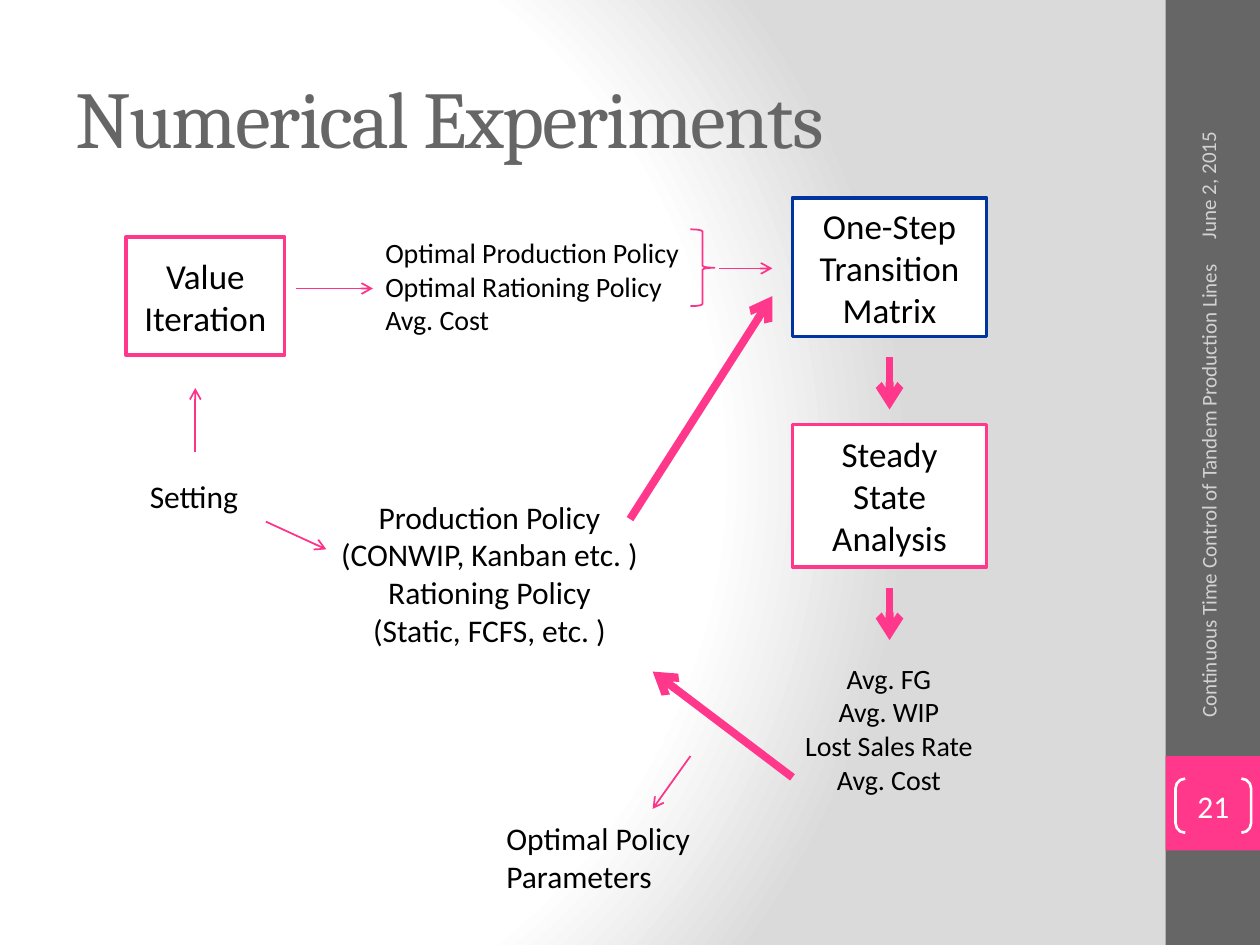
from dataclasses import dataclass

from lxml import etree
from pptx import Presentation
from pptx.dml.color import RGBColor
from pptx.enum.shapes import MSO_CONNECTOR, MSO_SHAPE
from pptx.enum.text import MSO_ANCHOR, PP_ALIGN
from pptx.oxml import parse_xml
from pptx.oxml.ns import nsdecls, qn
from pptx.util import Inches, Pt

LEFT, CENTER, RIGHT = PP_ALIGN.LEFT, PP_ALIGN.CENTER, PP_ALIGN.RIGHT
TOP, MIDDLE = MSO_ANCHOR.TOP, MSO_ANCHOR.MIDDLE
RECT, BRACE = MSO_SHAPE.RECTANGLE, MSO_SHAPE.RIGHT_BRACE
BRACKETS = MSO_SHAPE.DOUBLE_BRACKET
STRAIGHT = MSO_CONNECTOR.STRAIGHT


@dataclass(frozen=True)
class Theme:
    heading_font: str = "Cambria"
    body_font: str = "Calibri"
    gray: str = "666666"
    pink: str = "FF388C"
    arrow_pink: str = "FE3288"
    blue: str = "00349E"
    footer: str = "D2D2D2"
    shade: str = "DADADA"
    white: str = "FFFFFF"
    black: str = "000000"
    title_size: int = 46
    step_size: int = 20
    note_size: int = 18
    result_size: int = 16
    footer_size: int = 12
    thin: float = 1
    thick: float = 4.5


THEME = Theme()


def write(shape, lines, size, color=THEME.black, align=LEFT, anchor=TOP,
          wrap=True, font=THEME.body_font):
    frame = shape.text_frame
    frame.word_wrap = wrap
    frame.vertical_anchor = anchor
    frame.text = "\n".join(lines)
    for paragraph in frame.paragraphs:
        paragraph.alignment = align
        paragraph.font.name = font
        paragraph.font.size = Pt(size)
        paragraph.font.color.rgb = RGBColor.from_string(color)


def add_text(slide, box, lines, size, **style):
    label = slide.shapes.add_textbox(*map(Inches, box))
    write(label, lines, size, **style)
    return label


def add_shape(slide, kind, box, fill=None, line=None, width=1):
    shape = slide.shapes.add_shape(kind, *map(Inches, box))
    shape.shadow.inherit = False
    if fill:
        shape.fill.solid()
        shape.fill.fore_color.rgb = RGBColor.from_string(fill)
    else:
        shape.fill.background()
    if line:
        shape.line.color.rgb = RGBColor.from_string(line)
        shape.line.width = Pt(width)
    else:
        shape.line.fill.background()
    return shape


def add_arrow(slide, start, end, color, width):
    arrow = slide.shapes.add_connector(STRAIGHT, *map(Inches, (*start, *end)))
    arrow.line.color.rgb = RGBColor.from_string(color)
    arrow.line.width = Pt(width)
    etree.SubElement(arrow.line._get_or_add_ln(), qn("a:tailEnd"), type="arrow")
    etree.SubElement(arrow._element.spPr, qn("a:effectLst"))


def paint_background(slide):
    stops = ((0, THEME.white), (75, THEME.white), (100, THEME.shade))
    stop_xml = "".join(
        f'<a:gs pos="{at * 1000}"><a:srgbClr val="{color}"/></a:gs>'
        for at, color in stops)
    background = parse_xml(
        f'<p:bg {nsdecls("p", "a")}><p:bgPr><a:gradFill rotWithShape="1">'
        f'<a:gsLst>{stop_xml}</a:gsLst><a:path path="circle">'
        '<a:fillToRect l="20000" t="50000" r="100000" b="50000"/></a:path>'
        '</a:gradFill><a:effectLst/></p:bgPr></p:bg>')
    slide._element.cSld.insert(0, background)


def add_title(slide, box):
    title = add_text(slide, box, ["Numerical Experiments"], THEME.title_size,
                     color=THEME.gray, anchor=MIDDLE, font=THEME.heading_font)
    run = title.text_frame.paragraphs[0].runs[0]
    run.font._element.set("spc", "-100")


def add_sidebar(slide, box):
    x, y, width, height = box
    add_shape(slide, RECT, box, fill=THEME.gray)
    add_shape(slide, RECT, (x, y + 6, width, width), fill=THEME.pink)

    # Vertical footer texts: offsets, length and alignment
    footers = (
        ("June 2, 2015", -0.33, 1.13, 1.33, LEFT),
        ("Continuous Time Control of Tandem Production Lines",
         -1.62, 3.76, 3.92, RIGHT),
    )
    for words, dx, dy, length, align in footers:
        footer = add_text(slide, (x + dx, y + dy, length, 0.4), [words],
                          THEME.footer_size, color=THEME.footer,
                          align=align, anchor=MIDDLE)
        footer.rotation = 270

    # Page number
    number = add_shape(slide, BRACKETS, (x + 0.08, y + 6.18, 0.6, 0.43),
                       line=THEME.white, width=1.5)
    number.adjustments[0] = 0.179
    frame = number.text_frame
    frame.margin_left = frame.margin_right = 0
    frame.margin_top = frame.margin_bottom = 0
    write(number, ["21"], THEME.note_size, color=THEME.white,
          align=CENTER, anchor=MIDDLE)


def add_flow(slide, box):
    left, top = box[:2]

    def place(x, y, *size):
        return (left + x, top + y, *size)

    # Framed steps
    steps = (
        ("Value Iteration", (0, 0.31, 1.26, 0.94), THEME.pink),
        ("One-Step Transition Matrix", (5.29, 0, 1.54, 1.1), THEME.blue),
        ("Steady State Analysis", (5.29, 1.8, 1.54, 1.13), THEME.pink),
    )
    for words, area, outline in steps:
        step = add_shape(slide, RECT, place(*area), THEME.white, outline, 2)
        write(step, [words], THEME.step_size, align=CENTER, anchor=MIDDLE)

    # Inputs and results
    notes = (
        (["Optimal Production Policy", "Optimal Rationing Policy", "Avg. Cost"],
         (1.96, 0.25, 2.56, 0.94), THEME.result_size, LEFT, False),
        (["Avg. FG", "Avg. WIP", "Lost Sales Rate", "Avg. Cost"],
         (5.28, 3.63, 1.55, 1.45), THEME.result_size, CENTER, False),
        (["Setting"], (0.09, 2.17, 0.92, 0.4), THEME.note_size, LEFT, False),
        (["Production Policy", "(CONWIP, Kanban etc. )", "Rationing Policy",
          "(Static, FCFS, etc. )"],
         (1.59, 2.33, 2.59, 1.31), THEME.note_size, CENTER, False),
        (["Optimal Policy Parameters"],
         (2.92, 4.88, 1.8, 0.71), THEME.note_size, LEFT, True),
    )
    for lines, area, size, align, wrap in notes:
        add_text(slide, place(*area), lines, size, align=align, wrap=wrap)

    add_shape(slide, BRACE, place(4.48, 0.25, 0.19, 0.61),
              line=THEME.arrow_pink, width=THEME.thin)

    # Thin arrows lead through the setup, thick ones through the search loop
    thin_arrows = (
        ((1.35, 0.72), (1.96, 0.72)),
        ((4.71, 0.56), (5.13, 0.56)),
        ((0.55, 2.02), (0.55, 1.51)),
        ((1.11, 2.57), (1.59, 2.79)),
        ((4.48, 4.43), (4.18, 4.85)),
    )
    thick_arrows = (
        ((6.06, 1.26), (6.06, 1.68)),
        ((6.06, 3.1), (6.06, 3.51)),
        ((4, 2.55), (5.13, 0.78)),
        ((5.29, 4.6), (4.18, 3.76)),
    )
    for arrows, color, width in (
            (thin_arrows, THEME.arrow_pink, THEME.thin),
            (thick_arrows, THEME.pink, THEME.thick)):
        for start, end in arrows:
            add_arrow(slide, place(*start), place(*end), color, width)


def main():
    deck = Presentation()
    deck.slide_width, deck.slide_height = Inches(10), Inches(7.5)
    slide = deck.slides.add_slide(deck.slide_layouts[6])
    paint_background(slide)
    add_sidebar(slide, (9.25, 0, 0.75, 7.5))
    add_title(slide, (0.5, 0.3, 8.33, 1.25))
    add_flow(slide, (1, 1.57, 6.83, 5.59))
    deck.save("out.pptx")


if __name__ == "__main__":
    main()
